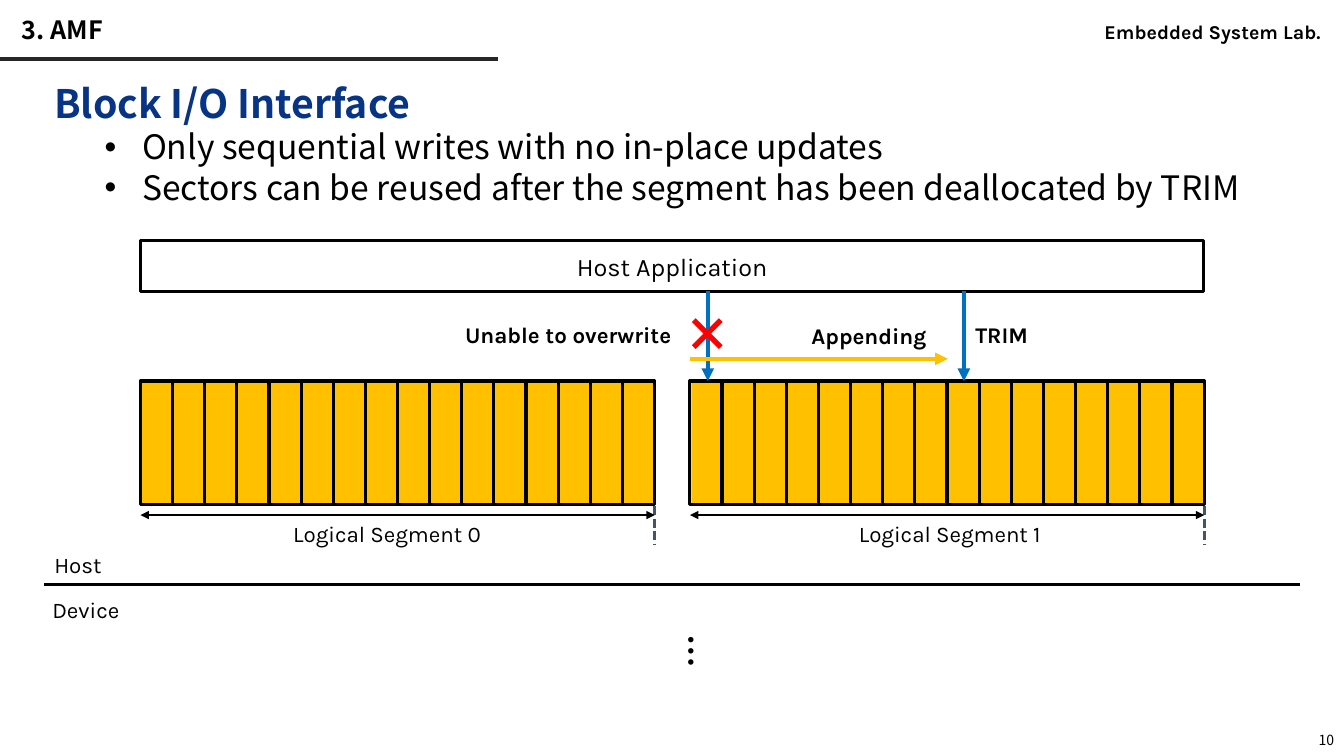
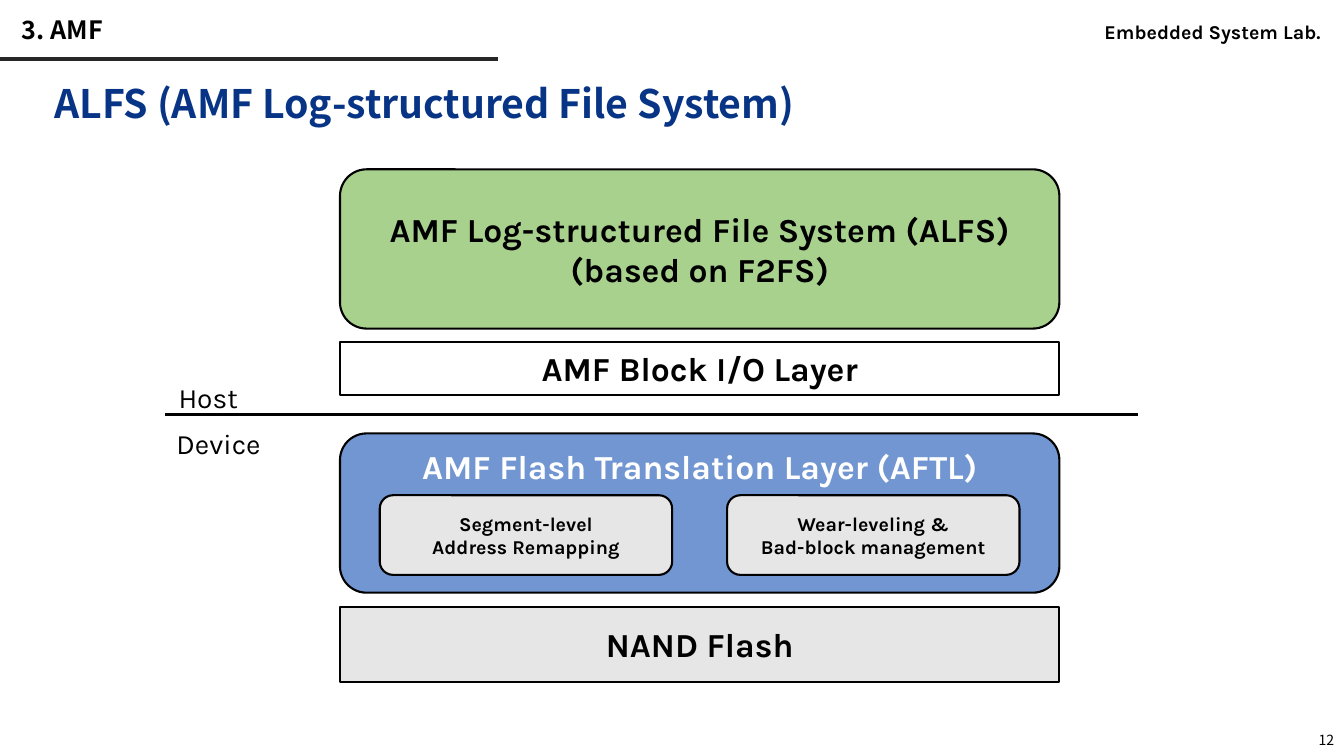
import pptx
import pptx.dml.color
import pptx.enum.dml
import pptx.enum.shapes
import pptx.enum.text
import pptx.oxml
import pptx.oxml.ns
import pptx.util

COLORS = {
    "black": "000000",
    "white": "FFFFFF",
    "heading": "083486",
    "rule": "262626",
    "amber": "FFC000",
    "blue": "0070C0",
    "red": "FF0000",
    "slate": "44546A",
    "green": "A9D18E",
    "periwinkle": "7196D1",
    "gray": "E7E6E6",
}
BODY_FONT = "Noto Sans CJK KR"
LABEL_FONT = "Karla"
CELL = pptx.util.Inches(0.1)
SHAPES = pptx.enum.shapes.MSO_SHAPE
ALIGN = pptx.enum.text.PP_ALIGN
ANCHOR = pptx.enum.text.MSO_ANCHOR
AUTO_SIZE = pptx.enum.text.MSO_AUTO_SIZE
DASH = pptx.enum.dml.MSO_LINE.SQUARE_DOT
rgb = {name: pptx.dml.color.RGBColor.from_string(value) for name, value in COLORS.items()}


def add_box(slide, area, text="", size=16, bold=False, color="black", font=LABEL_FONT,
            geometry=None, fill=None, outline=None, align=ALIGN.LEFT, anchor=ANCHOR.TOP):
    left, top, width, height = [round(CELL * length) for length in area]
    if geometry is None:
        shape = slide.shapes.add_textbox(left, top, width, height)
    else:
        shape = slide.shapes.add_shape(geometry, left, top, width, height)
        shape.shadow.inherit = False
        if fill:
            shape.fill.solid()
            shape.fill.fore_color.rgb = rgb[fill]
        else:
            shape.fill.background()
        if outline:
            shape.line.color.rgb = rgb["black"]
            shape.line.width = pptx.util.Pt(outline)
        else:
            shape.line.fill.background()
    frame = shape.text_frame
    frame.word_wrap = True
    frame.vertical_anchor = anchor
    frame.text = text
    for paragraph in frame.paragraphs:
        paragraph.alignment = align
        for run in paragraph.runs:
            run.font.size = pptx.util.Pt(size)
            run.font.bold = bold
            run.font.name = font
            run.font.color.rgb = rgb[color]
    return shape


def add_line(slide, start, end, color="black", width=2.25, dash=None, arrows=()):
    points = [round(CELL * length) for length in (*start, *end)]
    line = slide.shapes.add_connector(pptx.enum.shapes.MSO_CONNECTOR.STRAIGHT, *points)
    line.line.color.rgb = rgb[color]
    line.line.width = pptx.util.Pt(width)
    if dash:
        line.line.dash_style = dash
    namespace = pptx.oxml.ns.nsdecls("a")
    for arrow in arrows:
        line.line._get_or_add_ln().append(
            pptx.oxml.parse_xml(f'<a:{arrow} {namespace} type="triangle"/>'))
    line._element.spPr.append(pptx.oxml.parse_xml(f"<a:effectLst {namespace}/>"))


presentation = pptx.Presentation()
presentation.slide_width = pptx.util.Inches(13.33)
presentation.slide_height = pptx.util.Inches(7.5)

slides = []
headings = []
for number, heading in [("10", "Block I/O Interface"),
                        ("12", "ALFS (AMF Log-structured File System)")]:
    slide = presentation.slides.add_slide(presentation.slide_layouts[5])
    add_line(slide, (0, 5.85), (49.4, 5.85), "rule", 3)
    lab_name = add_box(slide, (108.55, 1.5, 24.9, 3.4), "Embedded System Lab.", 14, True)
    lab_name.text_frame.word_wrap = False

    title = slide.shapes.title
    title.left, title.top, title.width, title.height = [
        round(CELL * length) for length in (1.15, 1.15, 97.1, 4)]
    title.text_frame.text = "3. AMF"
    title.text_frame.auto_size = AUTO_SIZE.NONE
    title.text_frame.vertical_anchor = ANCHOR.MIDDLE
    paragraph = title.text_frame.paragraphs[0]
    paragraph.alignment = ALIGN.LEFT
    paragraph.line_spacing = 0.9
    font = paragraph.runs[0].font
    font.name, font.size, font.bold = BODY_FONT, pptx.util.Pt(18), True
    font.color.rgb = rgb["black"]

    add_box(slide, (103.3, 71.75, 30, 3.2), number, 10, font=BODY_FONT,
            align=ALIGN.RIGHT, anchor=ANCHOR.MIDDLE)
    headings.append(add_box(slide, (4.4, 7.37, 124.5, 7.4), heading, 28, True, "heading", BODY_FONT))
    slides.append(slide)

interface_slide, file_system_slide = slides

headings[0].height = round(CELL * 13.8)
for bullet in ["Only sequential writes with no in-place updates",
               "Sectors can be reused after the segment has been deallocated by TRIM"]:
    paragraph = headings[0].text_frame.add_paragraph()
    paragraph.text = bullet
    paragraph.level = 1
    properties = paragraph._element.get_or_add_pPr()
    properties.set("marL", str(pptx.util.Inches(0.87)))
    properties.set("indent", str(pptx.util.Inches(-0.37)))
    for element in ['buFont {} typeface="Arial"', 'buChar {} char="•"']:
        properties.append(pptx.oxml.parse_xml(
            f"<a:{element.format(pptx.oxml.ns.nsdecls('a'))}/>"))
    font = paragraph.runs[0].font
    font.name, font.size, font.bold = BODY_FONT, pptx.util.Pt(24), False
    font.color.rgb = rgb["black"]

SECTORS = 16
SEGMENT_WIDTH = 51
SECTOR_WIDTH = SEGMENT_WIDTH / SECTORS
SECTOR_TOP = 37.8
SECTOR_HEIGHT = 12.3
for segment, (left, label_left) in enumerate([(13.93, 28.1), (68.43, 84.2)]):
    right = left + SEGMENT_WIDTH
    add_box(interface_slide, (left + 0.15, 37.95, 50.8, 12),
            geometry=SHAPES.RECTANGLE, fill="amber")
    for sector in range(SECTORS):
        add_box(interface_slide,
                (left + sector * SECTOR_WIDTH, SECTOR_TOP, SECTOR_WIDTH, SECTOR_HEIGHT),
                geometry=SHAPES.RECTANGLE, outline=2.25)
    add_line(interface_slide, (right, 50.2), (right, 54.1), "slate", dash=DASH)
    add_line(interface_slide, (left, 51.1), (right, 51.1), width=1, arrows=("headEnd", "tailEnd"))
    add_box(interface_slide, (label_left, 51.1, 24.4, 3.7), f"Logical Segment {segment}")

add_box(interface_slide, (13.95, 23.85, 105.45, 5.1), "Host Application", 18,
        geometry=SHAPES.RECTANGLE, outline=2.25, align=ALIGN.CENTER, anchor=ANCHOR.MIDDLE)
for x in (70.2, 95.6):
    add_line(interface_slide, (x, 28.9), (x, SECTOR_TOP), "blue", 3, arrows=("tailEnd",))
add_line(interface_slide, (68.4, 35.6), (94, 35.6), "amber", 3, arrows=("tailEnd",))
cross = add_box(interface_slide, (68.25, 31.2, 3.8, 3.8), geometry=SHAPES.CROSS, fill="red")
cross.adjustments[0] = 0.43
cross.rotation = 315
for left, top, label in [(45.15, 31.35, "Unable to overwrite"), (95.75, 31.35, "TRIM"),
                         (79.5, 31.5, "Appending")]:
    add_box(interface_slide, (left, top, 24.4, 3.7), label, bold=True)
ellipsis = add_box(interface_slide, (65.4, 62.65, 6.4, 5), "…", 24, True, font=BODY_FONT)
ellipsis.rotation = 90

for slide, left, right, y, label_left, host_top, device_top, size in [
        (interface_slide, 4.4, 128.9, 58, 4.4, 54.15, 58.65, 16),
        (file_system_slide, 16.35, 112.9, 41.1, 16.72, 37.3, 41.8, 20)]:
    add_line(slide, (left, y), (right, y))
    add_box(slide, (label_left, host_top, 10.8, 4), "Host", size)
    add_box(slide, (label_left - 0.2, device_top, 10.8, 4), "Device", size)

LAYER_LEFT = 33.72
LAYER_WIDTH = 71.35
for top, height, text, geometry, fill, color, anchor in [
        (33.9, 5.25, "AMF Block I/O Layer", SHAPES.RECTANGLE, None, "black", ANCHOR.MIDDLE),
        (16.8, 15.8, "AMF Log-structured File System (ALFS)\n(based on F2FS)",
         SHAPES.ROUNDED_RECTANGLE, "green", "black", ANCHOR.MIDDLE),
        (43, 15.8, "AMF Flash Translation Layer (AFTL)",
         SHAPES.ROUNDED_RECTANGLE, "periwinkle", "white", ANCHOR.TOP),
        (60.2, 7.45, "NAND Flash", SHAPES.RECTANGLE, "gray", "black", ANCHOR.MIDDLE)]:
    add_box(file_system_slide, (LAYER_LEFT, top, LAYER_WIDTH, height), text, 24, True, color,
            geometry=geometry, fill=fill, outline=1.5, align=ALIGN.CENTER, anchor=anchor)

MODULE_WIDTH = 29
MODULE_MARGIN = 3.95
for left, text in [
        (LAYER_LEFT + MODULE_MARGIN, "Segment-level\nAddress Remapping"),
        (LAYER_LEFT + LAYER_WIDTH - MODULE_MARGIN - MODULE_WIDTH,
         "Wear-leveling &\nBad-block management")]:
    add_box(file_system_slide, (left, 49.13, MODULE_WIDTH, 7.9), text, 14, True,
            geometry=SHAPES.ROUNDED_RECTANGLE, fill="gray", outline=1.5,
            align=ALIGN.CENTER, anchor=ANCHOR.MIDDLE)

presentation.save("out.pptx")
